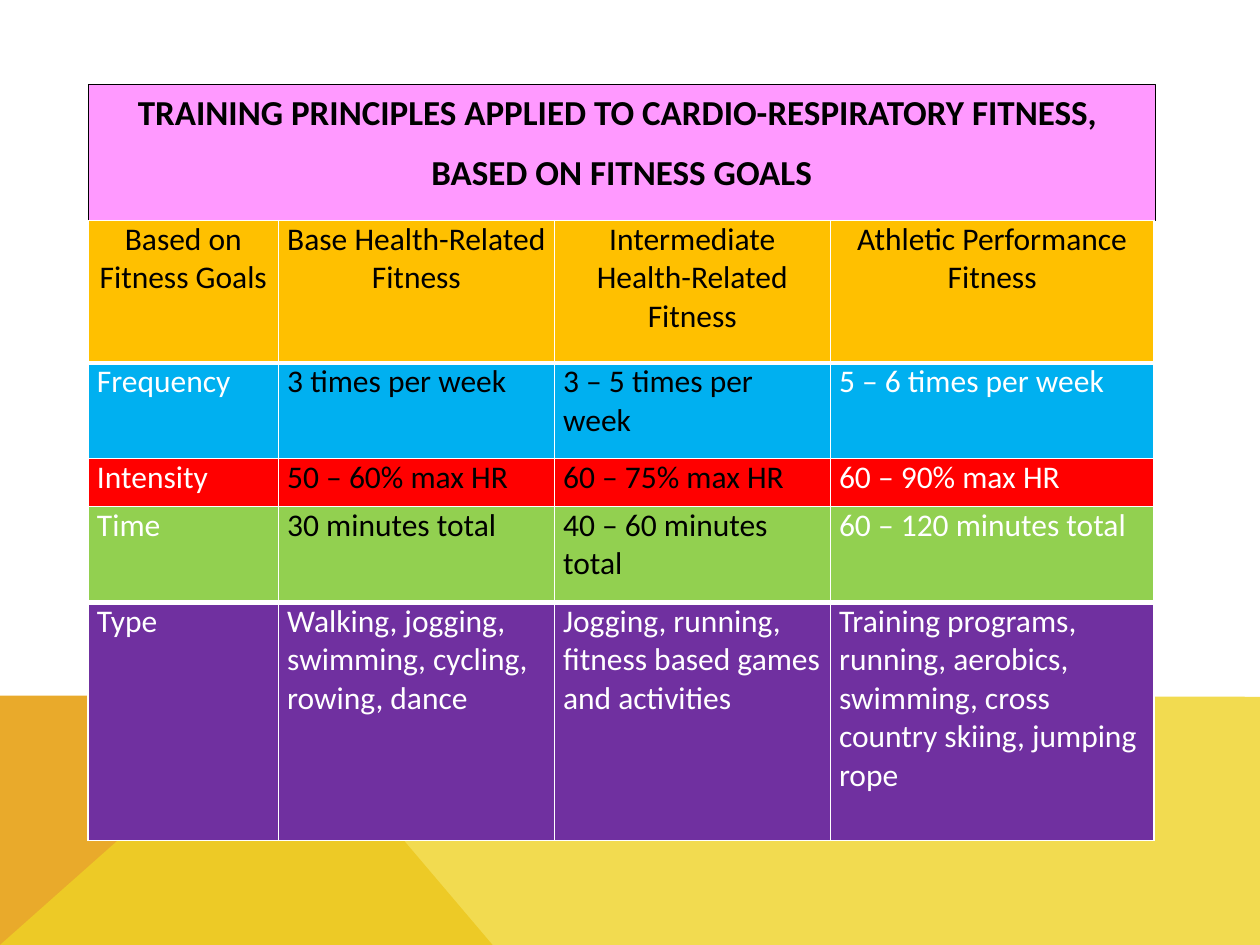
from pptx import Presentation
from pptx.dml.color import RGBColor
from pptx.enum.shapes import MSO_SHAPE
from pptx.enum.text import MSO_ANCHOR, PP_ALIGN
from pptx.oxml.ns import qn
from pptx.util import Inches, Pt
from lxml.etree import SubElement

# Content
TITLE = [
    "TRAINING PRINCIPLES APPLIED TO CARDIO-RESPIRATORY FITNESS, ",
    "BASED ON FITNESS GOALS",
]
# Each row: fill name, height, cell texts
ROWS = [
    ("header", 1.13, ["Based on Fitness Goals", "Base Health-Related Fitness",
                      "Intermediate Health-Related Fitness", "Athletic Performance Fitness"]),
    ("frequency", 0.76, ["Frequency", "3 times per week",
                         "3 – 5 times per week", "5 – 6 times per week"]),
    ("intensity", 0.38, ["Intensity", "50 – 60% max HR",
                         "60 – 75% max HR", "60 – 90% max HR"]),
    ("time", 0.76, ["Time", "30 minutes total",
                    "40 – 60 minutes total", "60 – 120 minutes total"]),
    ("type", 1.89, ["Type", "Walking, jogging, swimming, cycling, rowing, dance",
                    "Jogging, running, fitness based games and activities",
                    "Training programs, running, aerobics, swimming, cross country skiing, "
                    "jumping rope"]),
]
COLUMN_WIDTHS = [1.51, 2.19, 2.19, 2.57]
LEFT, TITLE_TOP, WIDTH, TITLE_HEIGHT = 0.7, 0.67, 8.47, 1.08

# Background wedges: fill name, opacity in percent, outline points
WEDGES = [
    ("wedge", 100, [(0, 7.5), (0, 5.52), (2.23, 5.52), (3.91, 7.5)]),
    ("band", 80, [(0, 7.5), (2.23, 5.52), (10, 5.53), (10, 7.5)]),
]

THEME = {
    "font": "Calibri", "title_size": 20, "table_size": 18,
    "dark": "000000", "light": "FFFFFF",
    "wedge": "E9AA2B", "band": "EFD225", "title": "FF99FF",
    "header": "FFC000", "frequency": "00B0F0", "intensity": "FF0000",
    "time": "92D050", "type": "7030A0",
}


def color(name):
    return RGBColor.from_string(THEME[name])


def paint(item, name):
    item.fill.solid()
    item.fill.fore_color.rgb = color(name)


def style_paragraph(paragraph, size, ink, alignment, bold=False):
    paragraph.alignment = alignment
    for run in paragraph.runs:
        run.font.name = THEME["font"]
        run.font.size = Pt(THEME[size])
        run.font.bold = bold
        run.font.color.rgb = color(ink)


def set_borders(cell, widths):
    """Draw the left, right, top and bottom borders, widths in points."""
    properties = cell._tc.get_or_add_tcPr()
    for index, (side, width) in enumerate(zip("LRTB", widths)):
        line = SubElement(properties, qn(f"a:ln{side}"), w=str(Pt(width)))
        fill = SubElement(line, qn("a:solidFill"))
        SubElement(fill, qn("a:srgbClr"), val=THEME["light"])
        properties.remove(line)
        properties.insert(index, line)  # borders come before the cell fill


def add_wedge(slide, fill_name, opacity, points):
    builder = slide.shapes.build_freeform(
        Inches(points[0][0]), Inches(points[0][1]), scale=1.0)
    builder.add_line_segments([(Inches(x), Inches(y)) for x, y in points[1:]], close=True)
    shape = builder.convert_to_shape()
    shape.shadow.inherit = False
    shape.line.fill.background()
    paint(shape, fill_name)
    if opacity < 100:
        tint = shape.fill._xPr.find(qn("a:solidFill"))[0]
        SubElement(tint, qn("a:alpha"), val=str(opacity * 1000))


def add_title(slide):
    shape = slide.shapes.add_shape(
        MSO_SHAPE.RECTANGLE, Inches(LEFT), Inches(TITLE_TOP), Inches(WIDTH), Inches(TITLE_HEIGHT))
    shape.shadow.inherit = False
    paint(shape, "title")
    shape.line.color.rgb = color("dark")
    shape.line.width = Pt(0.75)
    frame = shape.text_frame
    frame.word_wrap = True
    frame.vertical_anchor = MSO_ANCHOR.TOP
    frame.text = "\n".join(TITLE)
    for paragraph in frame.paragraphs:
        paragraph.space_after = Pt(10)
        style_paragraph(paragraph, "title_size", "dark", PP_ALIGN.CENTER, bold=True)


def text_ink(row_name, column):
    if row_name == "header":
        return "dark"
    return "light" if row_name == "type" or column in (0, 3) else "dark"


def add_goals_table(slide):
    table = slide.shapes.add_table(
        len(ROWS), len(COLUMN_WIDTHS), Inches(LEFT), Inches(TITLE_TOP + TITLE_HEIGHT),
        Inches(WIDTH), Inches(sum(height for _, height, _ in ROWS))).table
    for column, width in zip(table.columns, COLUMN_WIDTHS):
        column.width = Inches(width)
    for row_index, (name, height, texts) in enumerate(ROWS):
        table.rows[row_index].height = Inches(height)
        # Thick rules lie below the header and on both sides of the time/type edge
        top = 3 if name in ("frequency", "type") else 1
        bottom = 3 if name in ("header", "time") else 1
        alignment = PP_ALIGN.CENTER if name == "header" else PP_ALIGN.LEFT
        for column_index, text in enumerate(texts):
            cell = table.cell(row_index, column_index)
            cell.margin_left = cell.margin_right = Inches(0.07)
            cell.margin_top = cell.margin_bottom = 0
            cell.text_frame.text = text
            style_paragraph(cell.text_frame.paragraphs[0], "table_size",
                            text_ink(name, column_index), alignment)
            paint(cell, name)
            set_borders(cell, (1, 1, top, bottom))


def main():
    presentation = Presentation()
    presentation.slide_width, presentation.slide_height = Inches(10), Inches(7.5)
    slide = presentation.slides.add_slide(presentation.slide_layouts[6])
    for wedge in WEDGES:
        add_wedge(slide, *wedge)
    add_title(slide)
    add_goals_table(slide)
    presentation.save("out.pptx")


if __name__ == "__main__":
    main()
